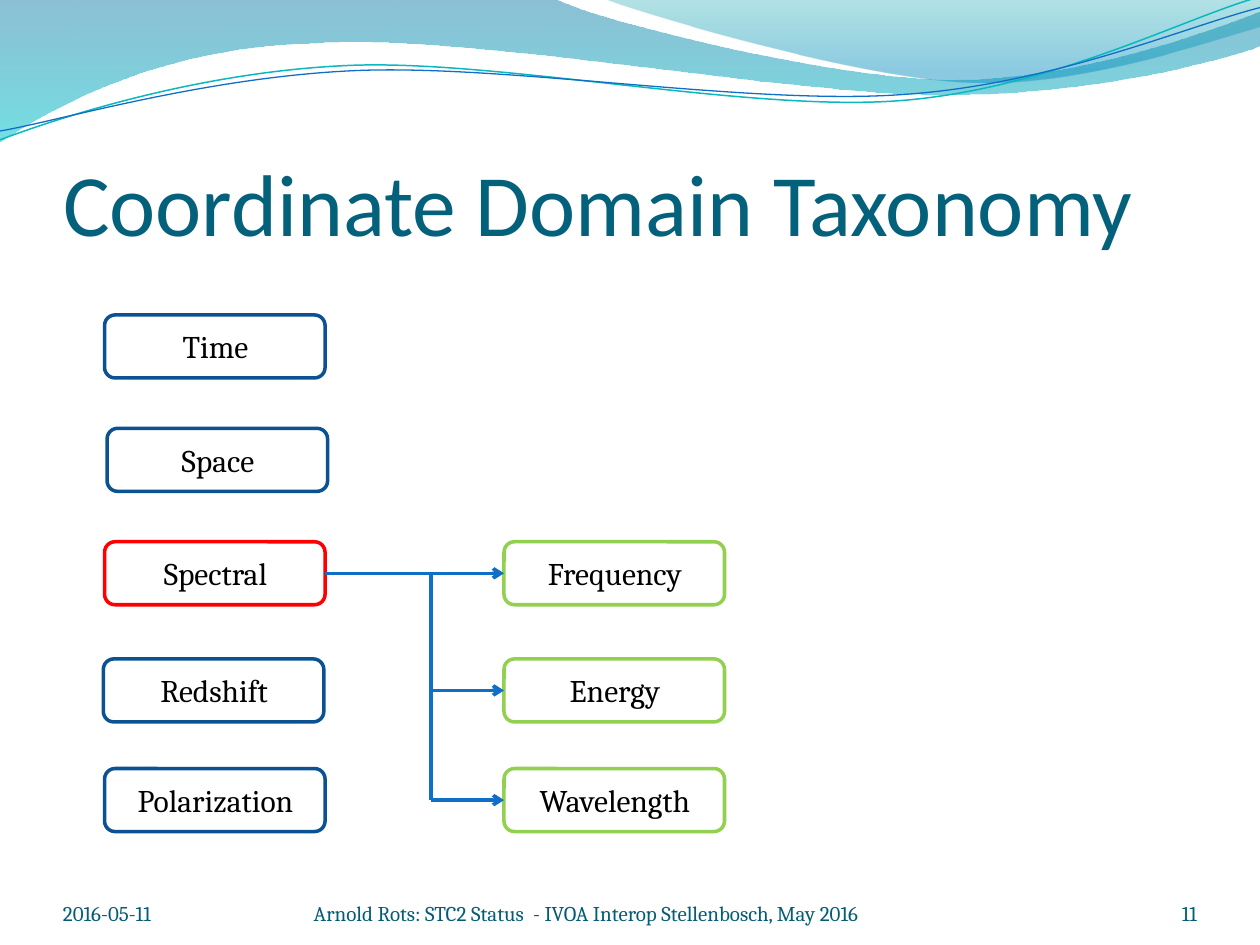
"""Build the coordinate domain taxonomy slide."""
from math import cos, radians, sin

from lxml import etree
from pptx import Presentation
from pptx.dml.color import RGBColor
from pptx.enum.shapes import MSO_CONNECTOR, MSO_SHAPE
from pptx.enum.text import MSO_ANCHOR, MSO_AUTO_SIZE, PP_ALIGN
from pptx.oxml.ns import qn
from pptx.util import Inches, Pt

ROUNDED = MSO_SHAPE.ROUNDED_RECTANGLE
STRAIGHT = MSO_CONNECTOR.STRAIGHT
TOP, BOTTOM = MSO_ANCHOR.TOP, MSO_ANCHOR.BOTTOM
LEFT, CENTER, RIGHT = PP_ALIGN.LEFT, PP_ALIGN.CENTER, PP_ALIGN.RIGHT
GROW = MSO_AUTO_SIZE.SHAPE_TO_FIT_TEXT

COLORS = {
    "title": "04617B", "footer": "045D75", "text": "000000",
    "domain": "0B5292", "selected": "FF0000", "quantity": "92D050",
    "arrow": "0F6FC6", "teal": "0AB8BF",
    "band_top": "0074A1", "band_bottom": "00C6CF",
    "overlay_top": "00A1A9", "overlay_bottom": "008BBF",
}
TITLE = "Coordinate Domain Taxonomy"
DOMAINS = [
    ("Time", 0.83, 2.5, "domain"),
    ("Space", 0.85, 3.4, "domain"),
    ("Spectral", 0.83, 4.3, "selected"),
    ("Redshift", 0.82, 5.23, "domain"),
    ("Polarization", 0.83, 6.1, "domain"),
]
QUANTITIES = [
    ("Frequency", 4, 4.3, "quantity"),
    ("Energy", 4, 5.23, "quantity"),
    ("Wavelength", 4, 6.1, "quantity"),
]
FOOTERS = [
    ("2016-05-11", 0.5, 1.83, LEFT),
    ("Arnold Rots: STC2 Status  - IVOA Interop Stellenbosch, May 2016", 2.49, 4.93, LEFT),
    ("11", 8.67, 0.83, RIGHT),
]
BOX_WIDTH, BOX_HEIGHT, TRUNK_X = 1.75, 0.5, 3.42
STRAND_ROTATION = 357.3

BANDS = [
    ((-0.01, -0.01, 10.02, 1.14),
     [(0, 0), (4.4, -0.01), (4.76, 0.17, 6.64, 0.63, 7.58, 0.63),
      (8.53, 0.63, 9.58, 0.26, 10, 0.09), (10.01, 0.36),
      (9.83, 0.44, 8.7, 0.76, 7.46, 0.75), (6.22, 0.75, 3.82, 0.28, 2.57, 0.34),
      (1.29, 0.36, 0.46, 0.83, -0.01, 1.13), (0, 0)],
     [(0, "band_top", 45), (1, "band_bottom", 55)]),
    ((4.79, -0.01, 5.21, 0.7),
     [(4.79, -0.01), (5.09, 0.11, 6.82, 0.62, 7.69, 0.65),
      (8.56, 0.69, 9.61, 0.32, 10, 0.21), (10, 0), (4.79, -0.01)],
     [(0, "overlay_top", 30), (0.8, "overlay_bottom", 45)]),
]
STRANDS = [
    ((-0.02, 0.22, 10.02, 0.71),
     [(0, 1.11), (0.48, 0.93, 1.58, 0.57, 2.77, 0.52),
      (3.95, 0.47, 5.93, 0.89, 7.13, 0.8), (8.33, 0.71, 9.38, 0.15, 9.98, -0.02)],
     "teal", 0.85),
    ((-0.02, 0.3, 10.03, 0.58),
     [(0, 1.04), (0.47, 0.96, 1.64, 0.61, 2.83, 0.56),
      (4.03, 0.51, 5.97, 0.84, 7.17, 0.75), (8.36, 0.67, 9.41, 0.21, 10, 0.06)],
     "arrow", 0.75),
]


def set_line(shape, color, width):
    shape.line.color.rgb = RGBColor.from_string(COLORS[color])
    shape.line.width = Pt(width)


def set_text(shape, text, size, font, color, align, anchor, insets=(0, 0, 0, 0)):
    frame = shape.text_frame
    frame.word_wrap = True
    frame.vertical_anchor = anchor
    (frame.margin_left, frame.margin_top,
     frame.margin_right, frame.margin_bottom) = map(Inches, insets)
    frame.text = text
    para = frame.paragraphs[0]
    para.alignment = align
    para.font.size = Pt(size)
    para.font.name = font
    para.font.color.rgb = RGBColor.from_string(COLORS[color])


def to_local(x, y, frame, rotation):
    left, top, width, height = frame
    angle = radians(-rotation)
    across, down = x - left - width / 2, y - top - height / 2
    return (Inches(across * cos(angle) - down * sin(angle) + width / 2),
            Inches(across * sin(angle) + down * cos(angle) + height / 2))


def add_wave(shapes, frame, segments, close, rotation=0):
    builder = shapes.build_freeform()
    builder.add_line_segments([(Inches(1), Inches(1))], close=close)
    wave = builder.convert_to_shape()
    wave.shadow.inherit = False
    wave.left, wave.top, wave.width, wave.height = map(Inches, frame)
    wave.rotation = rotation
    outline = next(wave.element.iter(qn("a:path")))
    outline.set("w", str(wave.width))
    outline.set("h", str(wave.height))
    for node in list(outline):
        outline.remove(node)
    for index, segment in enumerate(segments):
        line_tag = "a:lnTo" if index else "a:moveTo"
        node = etree.SubElement(outline, qn("a:cubicBezTo" if len(segment) == 6 else line_tag))
        for point in zip(segment[::2], segment[1::2]):
            x, y = to_local(*point, frame, rotation)
            etree.SubElement(node, qn("a:pt"), x=str(x), y=str(y))
    if close:
        etree.SubElement(outline, qn("a:close"))
    return wave


def add_band(shapes, frame, segments, stops):
    band = add_wave(shapes, frame, segments, True)
    band.line.fill.background()
    band.fill.gradient()
    band.fill.gradient_angle = 270
    for stop, (position, color, _) in zip(band.fill.gradient_stops, stops):
        stop.position = position
        stop.color.rgb = RGBColor.from_string(COLORS[color])
    for node, (_, _, opacity) in zip(band.element.iter(qn("a:srgbClr")), stops):
        etree.SubElement(node, qn("a:alpha"), val=str(opacity * 1000))


def add_box(shapes, text, left, top, color):
    box = shapes.add_shape(ROUNDED, *map(Inches, (left, top, BOX_WIDTH, BOX_HEIGHT)))
    box.shadow.inherit = False
    box.fill.background()
    set_line(box, color, 2)
    label = shapes.add_textbox(*map(Inches, (left + 0.09, top + 0.05, 1.58, 0.4)))
    set_text(label, text, 18, "Cambria", "text", CENTER, TOP, (0.1, 0.05, 0.1, 0.05))
    label.text_frame.auto_size = GROW


def add_link(shapes, start, end, arrow=True):
    link = shapes.add_connector(STRAIGHT, *map(Inches, start + end))
    set_line(link, "arrow", 2)
    properties = link.element.spPr
    if arrow:
        etree.SubElement(properties.find(qn("a:ln")), qn("a:tailEnd"), type="arrow")
    etree.SubElement(properties, qn("a:effectLst"))


def main():
    deck = Presentation()
    deck.slide_width, deck.slide_height = Inches(10), Inches(7.5)
    page = deck.slides.add_slide(deck.slide_layouts[5])
    shapes = page.shapes

    for frame, segments, stops in BANDS:
        add_band(shapes, frame, segments, stops)
    for frame, segments, color, width in STRANDS:
        strand = add_wave(shapes, frame, segments, False, STRAND_ROTATION)
        strand.fill.background()
        set_line(strand, color, width)

    title = shapes.title
    title.left, title.top, title.width, title.height = map(Inches, (0.5, 0.77, 9.08, 1.25))
    set_text(title, TITLE, 50, "Calibri", "title", LEFT, BOTTOM, (0, 0.05, 0, 0))
    shapes.element.append(title.element)

    for box in DOMAINS + QUANTITIES:
        add_box(shapes, *box)

    rows = [top + BOX_HEIGHT / 2 for _, _, top, _ in QUANTITIES]
    target = QUANTITIES[0][1]
    source = DOMAINS[2][1] + BOX_WIDTH
    add_link(shapes, (source, rows[0]), (target, rows[0]))
    add_link(shapes, (TRUNK_X, rows[0]), (TRUNK_X, rows[-1]), arrow=False)
    for row in rows[1:]:
        add_link(shapes, (TRUNK_X, row), (target, row))

    for text, left, width, align in FOOTERS:
        footer = shapes.add_textbox(*map(Inches, (left, 6.95, width, 0.4)))
        set_text(footer, text, 12, "Cambria", "footer", align, BOTTOM)

    deck.save("out.pptx")


if __name__ == "__main__":
    main()
